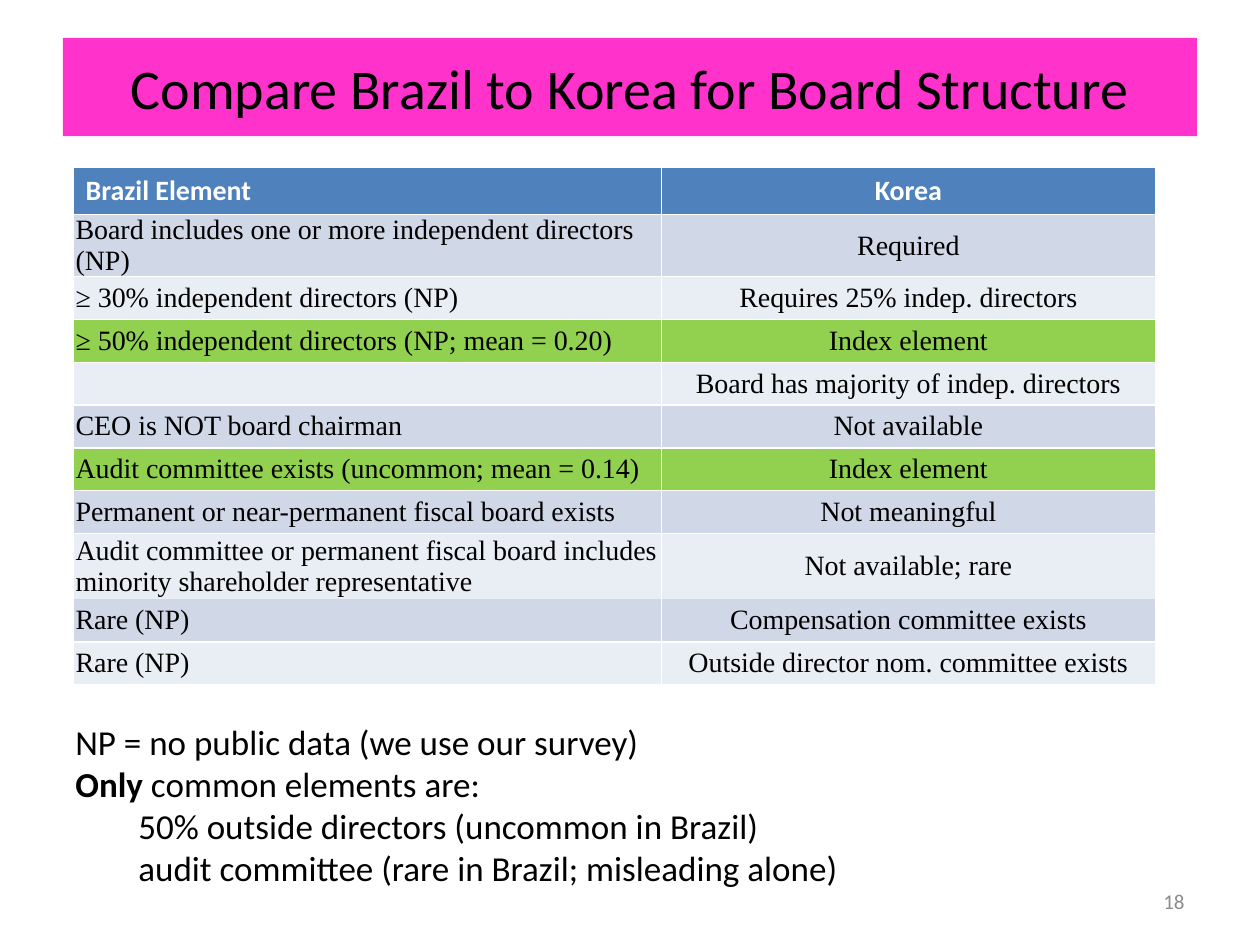
from lxml.etree import SubElement
from pptx import Presentation
from pptx.dml.color import RGBColor
from pptx.enum.shapes import MSO_SHAPE
from pptx.enum.text import MSO_ANCHOR, PP_ALIGN
from pptx.oxml.ns import qn
from pptx.util import Inches, Pt

TITLE = "Compare Brazil to Korea for Board Structure"
HEADER, DARK, LIGHT, COMMON = "4F81BD", "D0D8E8", "E9EDF4", "92D050"
ROWS = [
    ("Brazil Element", "Korea"),
    ("Board includes one or more independent directors (NP)", "Required"),
    ("≥ 30% independent directors (NP)", "Requires 25% indep. directors"),
    ("≥ 50% independent directors (NP; mean = 0.20)", "Index element"),
    ("", "Board has majority of indep. directors"),
    ("CEO is NOT board chairman", "Not available"),
    ("Audit committee exists (uncommon; mean = 0.14)", "Index element"),
    ("Permanent or near-permanent fiscal board exists", "Not meaningful"),
    ("Audit committee or permanent fiscal board includes minority shareholder representative",
     "Not available; rare"),
    ("Rare (NP)", "Compensation committee exists"),
    ("Rare (NP)", "Outside director nom. committee exists"),
]
COLUMN_WIDTHS = (4.67, 3.92)
ROW_HEIGHT, TALL_ROW_HEIGHT, TALL_ROW = 0.34, 0.52, 8
UNRULED_EDGES = {TALL_ROW: "a:lnB", TALL_ROW + 1: "a:lnT"}
NOTES = [
    (0, [("NP = no public data (we use our survey)", False)]),
    (0, [("Only", True), (" common elements are:", False)]),
    (1, [("50% outside directors (uncommon in Brazil)", False)]),
    (1, [("audit committee (rare in Brazil; misleading alone)", False)]),
]


def color(value):
    """Turn a hex string into a colour."""
    return RGBColor.from_string(value)


def write(para, text, size=16, font="Calibri", fill="000000", bold=False, align=PP_ALIGN.LEFT):
    """Add one formatted run to a paragraph."""
    para.alignment = align
    span = para.add_run()
    span.text = text
    span.font.size, span.font.name, span.font.bold = Pt(size), font, bold
    span.font.color.rgb = color(fill)


def row_fill(index, values):
    """Choose the fill of a table row."""
    if index == 0:
        return HEADER
    if values[1] == "Index element":
        return COMMON
    return DARK if index % 2 else LIGHT


def add_title(page):
    """Add the title bar."""
    bar = page.shapes.add_shape(MSO_SHAPE.RECTANGLE, Inches(0.5), Inches(0.3), Inches(9), Inches(0.78))
    bar.shadow.inherit = False
    bar.fill.solid()
    bar.fill.fore_color.rgb = color("FF33CC")
    bar.line.fill.background()
    bar.text_frame.vertical_anchor = MSO_ANCHOR.MIDDLE
    write(bar.text_frame.paragraphs[0], TITLE, size=32, align=PP_ALIGN.CENTER)


def fill_cell(cell, text, row, column, fill):
    """Format one table cell and write its text."""
    cell.vertical_anchor = MSO_ANCHOR.MIDDLE
    if row:
        cell.margin_left = cell.margin_right = Inches(0.02)
        cell.margin_top = cell.margin_bottom = 0
    if row in UNRULED_EDGES:
        edge = SubElement(cell._tc.get_or_add_tcPr(), qn(UNRULED_EDGES[row]))
        SubElement(edge, qn("a:noFill"))
    cell.fill.solid()
    cell.fill.fore_color.rgb = color(fill)
    if text:
        write(cell.text_frame.paragraphs[0], text,
              font="Times New Roman" if row else "Calibri",
              fill="000000" if row else "FFFFFF", bold=row == 0,
              align=PP_ALIGN.CENTER if column else PP_ALIGN.LEFT)


def add_comparison(page):
    """Add the comparison table."""
    heights = [TALL_ROW_HEIGHT if row == TALL_ROW else ROW_HEIGHT for row in range(len(ROWS))]
    table = page.shapes.add_table(len(ROWS), len(COLUMN_WIDTHS), Inches(0.58), Inches(1.33),
                                  Inches(sum(COLUMN_WIDTHS)), Inches(sum(heights))).table
    for column, width in enumerate(COLUMN_WIDTHS):
        table.columns[column].width = Inches(width)
    for row, values in enumerate(ROWS):
        table.rows[row].height = Inches(heights[row])
        for column, text in enumerate(values):
            fill_cell(table.cell(row, column), text, row, column, row_fill(row, values))


def add_notes(page):
    """Add the remarks below the table."""
    box = page.shapes.add_textbox(Inches(0.5), Inches(5.67), Inches(6.44), Inches(1.45))
    frame = box.text_frame
    frame.word_wrap = False
    for index, (level, spans) in enumerate(NOTES):
        para = frame.add_paragraph() if index else frame.paragraphs[0]
        for text, bold in spans:
            write(para, text, size=20, bold=bold)
        if level:
            para.level = level
            para._p.get_or_add_pPr().set("marL", str(Inches(0.5 * level)))


def add_page_number(page):
    """Add the page number."""
    box = page.shapes.add_textbox(Inches(7.17), Inches(6.95), Inches(2.33), Inches(0.4))
    box.text_frame.word_wrap = True
    box.text_frame.vertical_anchor = MSO_ANCHOR.MIDDLE
    write(box.text_frame.paragraphs[0], "18", size=12, fill="8C8C8C", align=PP_ALIGN.RIGHT)


def main():
    """Build the slide and save it."""
    deck = Presentation()
    deck.slide_width, deck.slide_height = Inches(10), Inches(7.5)
    page = deck.slides.add_slide(deck.slide_layouts[6])
    add_title(page)
    add_comparison(page)
    add_notes(page)
    add_page_number(page)
    deck.save("out.pptx")


if __name__ == "__main__":
    main()
